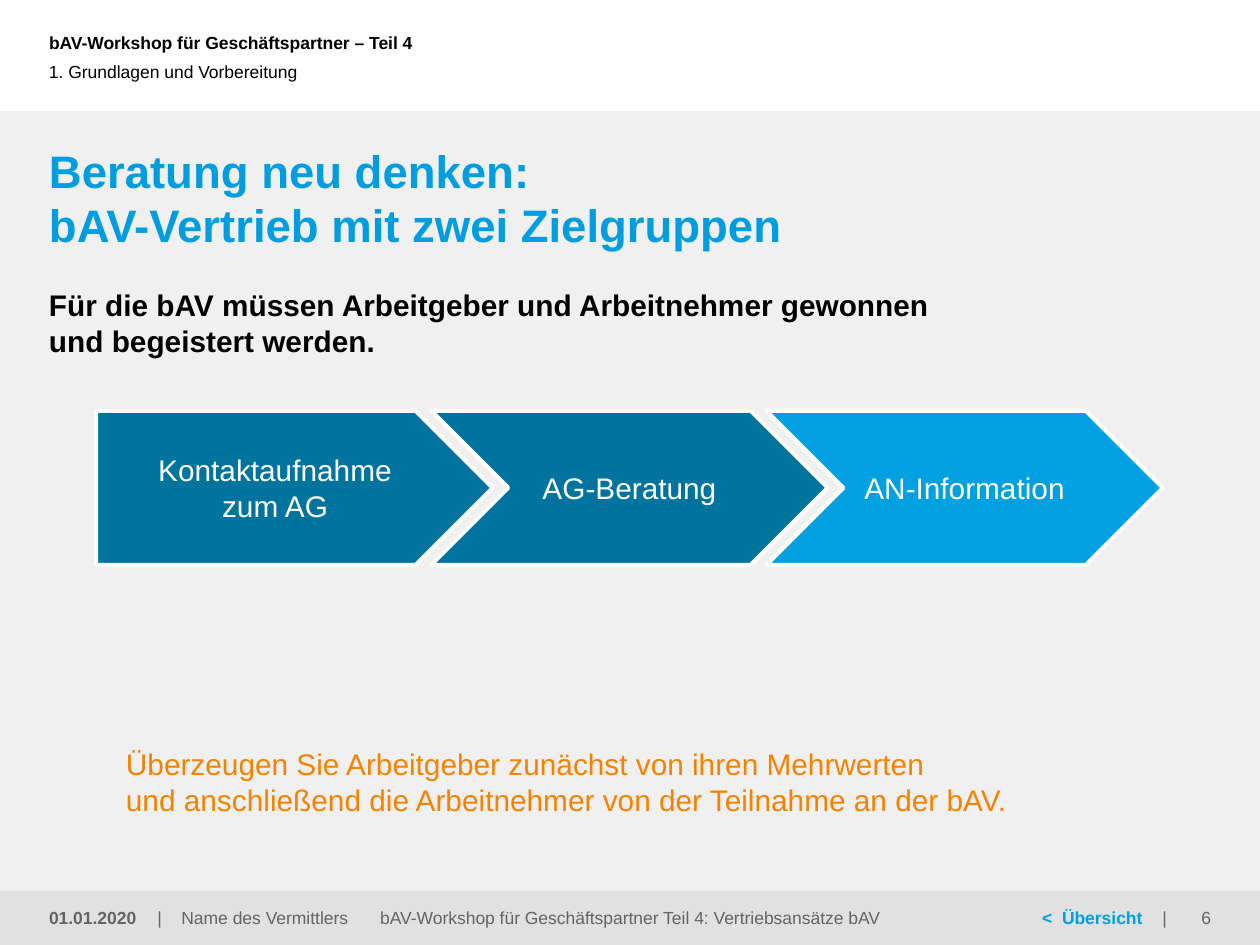
from lxml import etree
from pptx import Presentation
from pptx.dml.color import RGBColor
from pptx.enum import shapes, text
from pptx.oxml.ns import qn
from pptx.util import Pt

BLACK = RGBColor(0, 0, 0)
WHITE = RGBColor(0xFF, 0xFF, 0xFF)
PANEL_GRAY = RGBColor(0xF0, 0xF0, 0xF0)
FOOTER_GRAY = RGBColor(0xE1, 0xE1, 0xE1)
TEXT_GRAY = RGBColor(0x64, 0x64, 0x64)
TITLE_BLUE = RGBColor(0x00, 0x9E, 0xE0)
LIGHT_BLUE = RGBColor(0x00, 0xA0, 0xE1)
DARK_BLUE = RGBColor(0x00, 0x74, 0x9F)
ORANGE = RGBColor(0xF5, 0x82, 0x00)

LEFT, MIDDLE = text.PP_ALIGN.LEFT, text.MSO_ANCHOR.MIDDLE
CENTER, RIGHT = text.PP_ALIGN.CENTER, text.PP_ALIGN.RIGHT
MARGIN = 28
FOOTER_TOP, FOOTER_HEIGHT = 509, 31

presentation = Presentation()
presentation.slide_width, presentation.slide_height = Pt(720), Pt(540)
slide = presentation.slides.add_slide(presentation.slide_layouts[6])


def add_filled_shape(kind, left, top, width, height, color):
    shape = slide.shapes.add_shape(kind, Pt(left), Pt(top), Pt(width), Pt(height))
    shape.shadow.inherit = False
    shape.fill.solid()
    shape.fill.fore_color.rgb = color
    shape.line.fill.background()
    return shape


def add_text(left, top, width, height, runs, size=10, color=TEXT_GRAY, align=LEFT,
             anchor=MIDDLE, line_height=None, tabs=()):
    """Add a text box without insets; runs is a list of (text, bold, color or None)."""
    box = slide.shapes.add_textbox(Pt(left), Pt(top), Pt(width), Pt(height))
    frame = box.text_frame
    frame.word_wrap = True
    frame.vertical_anchor = anchor
    frame.margin_left = frame.margin_right = frame.margin_top = frame.margin_bottom = 0
    paragraph = frame.paragraphs[0]
    paragraph.alignment = align
    if line_height:
        paragraph.line_spacing = Pt(line_height)
    if tabs:
        tab_list = etree.SubElement(paragraph._p.get_or_add_pPr(), qn("a:tabLst"))
        for position in tabs:
            etree.SubElement(tab_list, qn("a:tab"), pos=str(Pt(position)), algn="l")
    for index, (words, bold, run_color) in enumerate(runs):
        for line_index, line in enumerate(words.split("\n")):
            if line_index:
                paragraph.add_line_break()
            run = paragraph.add_run()
            run.text = line
            run.font.name, run.font.size, run.font.bold = "Arial", Pt(size), bold
            run.font.color.rgb = run_color or color


# Background bands
RECTANGLE = shapes.MSO_SHAPE.RECTANGLE
add_filled_shape(RECTANGLE, 0, 63.5, 720, 476.5, PANEL_GRAY)
add_filled_shape(RECTANGLE, 0, FOOTER_TOP, 720, FOOTER_HEIGHT, FOOTER_GRAY)

# Header
add_text(MARGIN, 0, 467, 48.5, [("bAV-Workshop für Geschäftspartner – Teil 4", True, None)],
         color=BLACK)
add_text(MARGIN, 18, 487, 45.5, [("1. Grundlagen und Vorbereitung", False, None)], color=BLACK)

# Title and statements
add_text(MARGIN, 82, 664, 62,
         [("Beratung neu denken:\nbAV-Vertrieb mit zwei Zielgruppen", True, None)],
         size=26, color=TITLE_BLUE, anchor=text.MSO_ANCHOR.TOP, line_height=31)
add_text(MARGIN, 164, 664, 41,
         [("Für die bAV müssen Arbeitgeber und Arbeitnehmer gewonnen\n"
           "und begeistert werden.", True, None)],
         size=17, color=BLACK, anchor=text.MSO_ANCHOR.TOP, line_height=20.5)
add_text(72, 425, 620, 43,
         [("Überzeugen Sie Arbeitgeber zunächst von ihren Mehrwerten\n"
           "und anschließend die Arbeitnehmer von der Teilnahme an der bAV.", False, None)],
         size=17, color=ORANGE, line_height=20.5)

# Process arrows
steps = [
    (shapes.MSO_SHAPE.PENTAGON, "Kontaktaufnahme\vzum AG", DARK_BLUE),
    (shapes.MSO_SHAPE.CHEVRON, "AG-Beratung", DARK_BLUE),
    (shapes.MSO_SHAPE.CHEVRON, "AN-Information", LIGHT_BLUE),
]
for index, (kind, label, color) in enumerate(steps):
    arrow = add_filled_shape(kind, 55 + index * 191.5, 234.8, 226.5, 88, color)
    arrow.line.color.rgb = WHITE
    arrow.line.width = Pt(2.25)
    arrow.text_frame.word_wrap = True
    arrow.text_frame.vertical_anchor = MIDDLE
    arrow.text_frame.text = label
    paragraph = arrow.text_frame.paragraphs[0]
    paragraph.alignment = CENTER
    paragraph.line_spacing = Pt(20.5)
    for run in paragraph.runs:
        run.font.name, run.font.size = "Arial", Pt(17)
        run.font.color.rgb = WHITE

# Footer: left, width, runs, alignment, tab stops
footer_items = [
    (MARGIN, 60, [("01.01.2020", True, None)], LEFT, ()),
    (90, 125, [("|\tName des Vermittlers", False, None)], LEFT, (13.7,)),
    (205, 310, [("bAV-Workshop für Geschäftspartner Teil 4: Vertriebsansätze bAV",
                 False, None)], CENTER, ()),
    (595.5, 75, [("<\tÜbersicht", True, LIGHT_BLUE), ("\t|", False, None)], LEFT, (11.4, 68.8)),
    (672, 20, [("6", False, None)], RIGHT, ()),
]
for left, width, runs, align, tabs in footer_items:
    add_text(left, FOOTER_TOP, width, FOOTER_HEIGHT, runs, align=align, tabs=tabs)

presentation.save("out.pptx")
